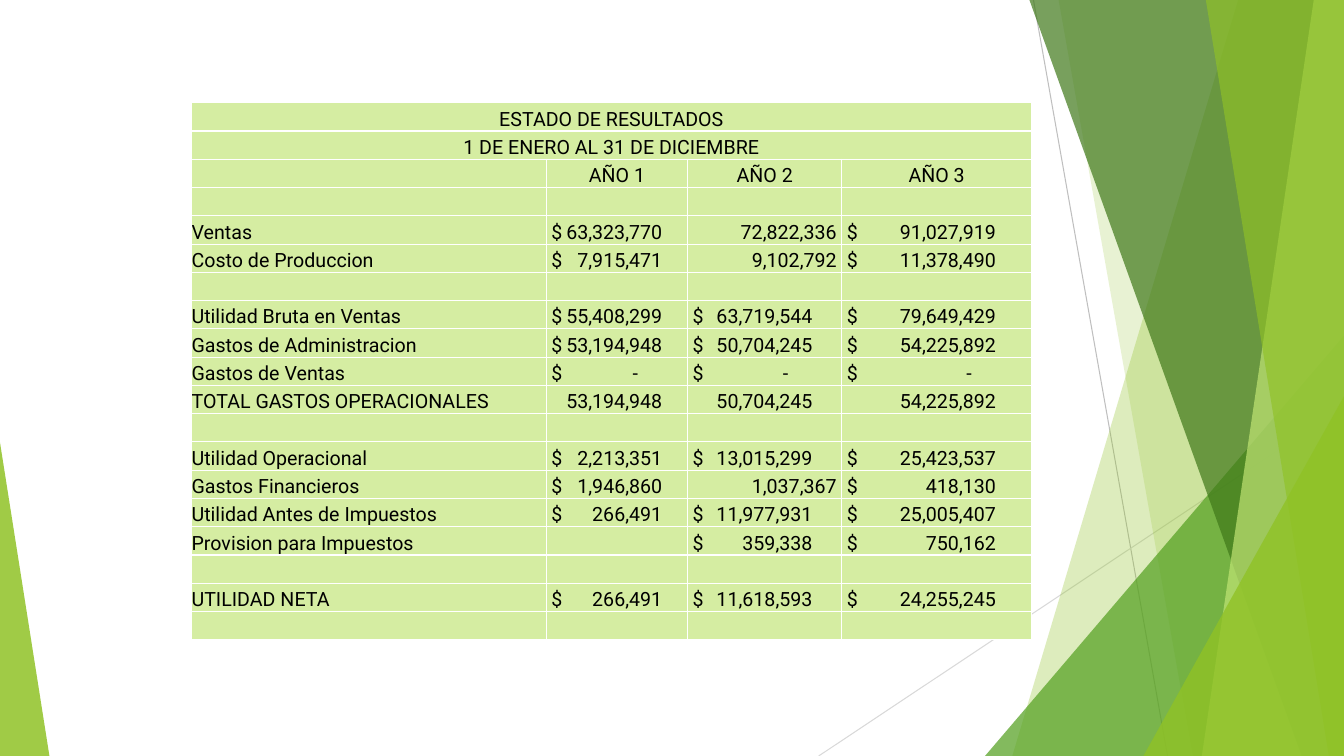
"""Build the income statement slide with its green faceted backdrop."""
from pptx import Presentation
from pptx.dml.color import RGBColor
from pptx.enum.shapes import MSO_CONNECTOR, MSO_SHAPE
from pptx.enum.text import MSO_ANCHOR, PP_ALIGN
from pptx.oxml.xmlchemy import OxmlElement
from pptx.util import Inches, Pt

LINE = MSO_CONNECTOR.STRAIGHT
WEDGE = MSO_SHAPE.ISOSCELES_TRIANGLE
LEFT, MID, RIGHT = PP_ALIGN.LEFT, PP_ALIGN.CENTER, PP_ALIGN.RIGHT
BASE = MSO_ANCHOR.BOTTOM

WIDE, HIGH = 13.33, 7.5
FONT, SIZE = "Roboto", 14
HUES = {
    "lime": "90C226", "leaf": "54A021", "moss": "3F7819", "pale": "C0E474",
    "cell": "D5EDA2", "ink": "000000", "rule": "FFFFFF",
    "gray": "BFBFBF", "mist": "D9D9D9",
}

HEADS = ["ESTADO DE RESULTADOS", "1 DE ENERO AL 31 DE DICIEMBRE"]
YEARS = ("", "AÑO 1", "AÑO 2", "AÑO 3")
BLANK = ("", "", "", "")
ROWS = [
    BLANK,
    ("Ventas", "$ 63,323,770", "> 72,822,336", "$ 91,027,919"),
    ("Costo de Produccion", "$ 7,915,471", "> 9,102,792", "$ 11,378,490"),
    BLANK,
    ("Utilidad Bruta en Ventas", "$ 55,408,299", "$ 63,719,544", "$ 79,649,429"),
    ("Gastos de Administracion", "$ 53,194,948", "$ 50,704,245", "$ 54,225,892"),
    ("Gastos de Ventas", "$ -", "$ -", "$ -"),
    ("TOTAL GASTOS OPERACIONALES", "53,194,948", "50,704,245", "54,225,892"),
    BLANK,
    ("Utilidad Operacional", "$ 2,213,351", "$ 13,015,299", "$ 25,423,537"),
    ("Gastos Financieros", "$ 1,946,860", "> 1,037,367", "$ 418,130"),
    ("Utilidad Antes de Impuestos", "$ 266,491", "$ 11,977,931", "$ 25,005,407"),
    ("Provision para Impuestos", "", "$ 359,338", "$ 750,162"),
    BLANK,
    ("UTILIDAD NETA", "$ 266,491", "$ 11,618,593", "$ 24,255,245"),
    BLANK,
]
COLS = [3.52, 1.4, 1.53, 1.88]
STOPS = [0, 1.1, 1.19, 1.48]
GRID = (1.9, 1.02, 8.33, 5.33)
PAD, DASH = 0.05, 0.24

LINES = [("gray", 10.25, 0, 11.58, HIGH), ("mist", WIDE, 4.03, 8.12, HIGH)]
FACETS = [
    ("strip", "lime", 30, (12.28, 10.04)),
    ("strip", "lime", 20, (10.5, 11.83)),
    ("wedge", "leaf", 72, (9.77, 3.33, WIDE, 1)),
    ("strip", "moss", 70, (10.21, 12.91)),
    ("strip", "pale", 70, (13.03, 11.92)),
    ("strip", "lime", 65, (11.96, 13.18)),
    ("wedge", "lime", 80, (11.34, 3.93, WIDE, 1)),
    ("wedge", "lime", 85, (0, 4.39, 0.49, 0)),
]


def hue(name):
    return RGBColor.from_string(HUES[name])


def add(node, tag, **attrs):
    kid = OxmlElement(tag)
    for key, val in attrs.items():
        kid.set(key, str(val))
    node.append(kid)
    return kid


def draw_line(shapes, name, *ends):
    line = shapes.add_connector(LINE, *map(Inches, ends))
    line.line.color.rgb = hue(name)
    line.line.width = Pt(0.75)
    add(line._element.spPr, "a:effectLst")


def strip(shapes, top, low):
    pen = shapes.build_freeform(Inches(top), 0)
    ends = [(WIDE, 0), (WIDE, HIGH), (low, HIGH)]
    pen.add_line_segments([(Inches(x), Inches(y)) for x, y in ends])
    return pen.convert_to_shape()


def wedge(shapes, left, top, right, tip):
    box = (left, top, right - left, HIGH - top)
    shape = shapes.add_shape(WEDGE, *map(Inches, box))
    shape.adjustments[0] = tip
    return shape


def tint(shape, name, alpha):
    shape.shadow.inherit = False
    shape.line.fill.background()
    shape.fill.solid()
    shape.fill.fore_color.rgb = hue(name)
    color = shape._element.spPr.find(".//" + "{*}srgbClr")
    add(color, "a:alpha", val=alpha * 1000)


def frame(cell):
    props = cell._tc.get_or_add_tcPr()
    for num, side in enumerate(("lnL", "lnR", "lnT", "lnB")):
        edge = OxmlElement("a:" + side)
        edge.set("w", str(Pt(1)))
        add(add(edge, "a:solidFill"), "a:srgbClr", val=HUES["rule"])
        props.insert(num, edge)


def write(cell, text, align=LEFT, pad=0, stop=0):
    cell.fill.solid()
    cell.fill.fore_color.rgb = hue("cell")
    cell.vertical_anchor = BASE
    cell.margin_top = cell.margin_bottom = 0
    cell.margin_left = cell.margin_right = Inches(pad)
    frame(cell)
    para = cell.text_frame.paragraphs[0]
    para.alignment = align
    if not text:
        add(para._p, "a:endParaRPr", sz=SIZE * 100)
        return
    if stop:
        tabs = add(para._p.get_or_add_pPr(), "a:tabLst")
        add(tabs, "a:tab", pos=Inches(stop), algn="r")
    run = para.add_run()
    run.text = text
    run.font.name, run.font.size = FONT, Pt(SIZE)
    run.font.color.rgb = hue("ink")


def amount(cell, text, stop):
    sign, _, num = text.rpartition(" ")
    if sign == ">":
        write(cell, num, RIGHT, PAD)
    elif num:
        write(cell, sign + "\t" + num, LEFT, PAD,
              stop - DASH if num == "-" else stop)
    else:
        write(cell, "")


def fill_grid(shapes):
    count = len(HEADS) + 1 + len(ROWS)
    grid = shapes.add_table(count, len(COLS), *map(Inches, GRID)).table
    grid.first_row = grid.horz_banding = False
    for col, wide in zip(grid.columns, COLS):
        col.width = Inches(wide)
    for row in grid.rows:
        row.height = Inches(GRID[3] / count)
    for r, text in enumerate(HEADS):
        for c in range(len(COLS)):
            write(grid.cell(r, c), "" if c else text, MID)
        grid.cell(r, 0).merge(grid.cell(r, len(COLS) - 1))
    for c, text in enumerate(YEARS):
        write(grid.cell(len(HEADS), c), text, MID)
    for r, row in enumerate(ROWS, len(HEADS) + 1):
        write(grid.cell(r, 0), row[0])
        for c in range(1, len(COLS)):
            amount(grid.cell(r, c), row[c], STOPS[c])


def main():
    deck = Presentation()
    deck.slide_width, deck.slide_height = Inches(WIDE), Inches(HIGH)
    shapes = deck.slides.add_slide(deck.slide_layouts[6]).shapes
    for line in LINES:
        draw_line(shapes, *line)
    makers = {"strip": strip, "wedge": wedge}
    for kind, name, alpha, dims in FACETS:
        tint(makers[kind](shapes, *dims), name, alpha)
    fill_grid(shapes)
    deck.save("out.pptx")


if __name__ == "__main__":
    main()
